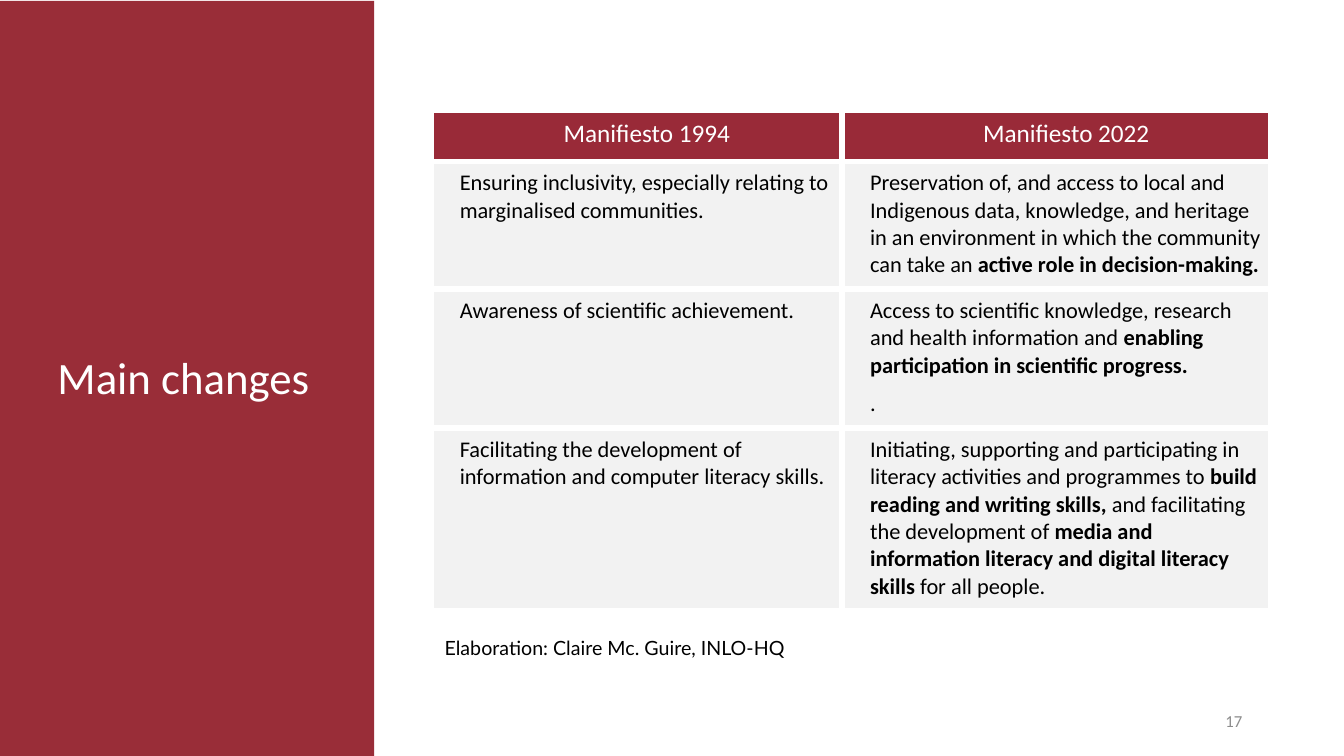
from lxml import etree
from pptx import Presentation
from pptx.dml.color import RGBColor
from pptx.enum.shapes import MSO_SHAPE
from pptx.enum.text import MSO_ANCHOR, PP_ALIGN
from pptx.oxml.ns import qn
from pptx.util import Inches, Pt

TITLE = "Main changes"
CREDIT = "Elaboration: Claire Mc. Guire, INLO-HQ"
PAGE_NUMBER = "17"
HEADERS = ["Manifiesto 1994", "Manifiesto 2022"]
# Each cell is a list of paragraphs; each paragraph is a list of (text, bold) runs.
ROWS = [
    (
        [[("Ensuring inclusivity, especially relating to marginalised communities.", False)]],
        [[("Preservation of, and access to local and Indigenous data, knowledge, and heritage "
           "in an environment in which the community can take an ", False),
          ("active role in decision-making.", True)]],
    ),
    (
        [[("Awareness of scientific achievement.", False)]],
        [[("Access to scientific knowledge, research and health information and ", False),
          ("enabling participation in scientific progress.", True)],
         [(".", False)]],
    ),
    (
        [[("Facilitating the development of\ninformation and computer literacy skills.", False)]],
        [[("Initiating, supporting and participating in literacy activities and programmes to ", False),
          ("build reading and writing skills, ", True),
          ("and facilitating the development of ", False),
          ("media and information literacy and digital literacy skills ", True),
          ("for all people.", False)]],
    ),
]
COLUMN_WIDTHS = [4.07, 4.25]
ROW_HEIGHTS = [0.51, 1.26, 1.37, 1.8]
HEADER_MARGINS = (0.06, 0.09, 0.06, 0.06)
BODY_MARGINS = (0.08, 0.08, 0.08, 0.1)

PANEL_RED = RGBColor(0x99, 0x2D, 0x38)
HEADER_RED = RGBColor(0x99, 0x2A, 0x38)
CELL_GRAY = RGBColor(0xF2, 0xF2, 0xF2)
NUMBER_GRAY = RGBColor(0x8C, 0x8C, 0x8C)
WHITE = RGBColor(0xFF, 0xFF, 0xFF)
BLACK = RGBColor(0, 0, 0)
LEFT, CENTER, RIGHT = PP_ALIGN.LEFT, PP_ALIGN.CENTER, PP_ALIGN.RIGHT


def add_runs(paragraph, runs, size, color, font="Calibri"):
    """Add (text, bold) runs; a newline in the text becomes a line break."""
    for text, bold in runs:
        for index, line in enumerate(text.split("\n")):
            if index:
                paragraph.add_line_break()
            run = paragraph.add_run()
            run.text = line
            run.font.name = font
            run.font.size = Pt(size)
            run.font.bold = bold
            run.font.color.rgb = color


def style_cell(cell, fill, margins):
    """Set the margins, white borders and fill of a cell."""
    left, top, right, bottom = map(Inches, margins)
    cell.margin_left, cell.margin_top = left, top
    cell.margin_right, cell.margin_bottom = right, bottom
    properties = cell._tc.get_or_add_tcPr()
    for side in ("a:lnL", "a:lnR", "a:lnT", "a:lnB"):
        border = etree.SubElement(properties, qn(side), w=str(Pt(4.5)))
        border_fill = etree.SubElement(border, qn("a:solidFill"))
        etree.SubElement(border_fill, qn("a:srgbClr"), val=str(WHITE))
    cell.fill.solid()
    cell.fill.fore_color.rgb = fill


def fill_cell(cell, paragraphs, size, color, alignment, before, after):
    text_frame = cell.text_frame
    for index, runs in enumerate(paragraphs):
        paragraph = text_frame.add_paragraph() if index else text_frame.paragraphs[0]
        paragraph.alignment = alignment
        paragraph.space_before = Pt(before)
        paragraph.space_after = Pt(after)
        properties = paragraph._p.get_or_add_pPr()
        properties.set("marL", str(Inches(0.2)))
        properties.set("indent", "0")
        add_runs(paragraph, runs, size, color)


def add_table(slide):
    frame = slide.shapes.add_table(
        len(ROW_HEIGHTS), len(COLUMN_WIDTHS), Inches(4.28), Inches(1.09),
        Inches(sum(COLUMN_WIDTHS)), Inches(sum(ROW_HEIGHTS)))
    table = frame.table
    table.first_row = False
    table.horz_banding = False
    for column, width in zip(table.columns, COLUMN_WIDTHS):
        column.width = Inches(width)
    for row, height in zip(table.rows, ROW_HEIGHTS):
        row.height = Inches(height)
    for column, header in enumerate(HEADERS):
        cell = table.cell(0, column)
        style_cell(cell, HEADER_RED, HEADER_MARGINS)
        fill_cell(cell, [[(header, False)]], 18, WHITE, CENTER, 12, 0)
    for row, contents in enumerate(ROWS, start=1):
        for column, paragraphs in enumerate(contents):
            cell = table.cell(row, column)
            style_cell(cell, CELL_GRAY, BODY_MARGINS)
            fill_cell(cell, paragraphs, 16, BLACK, LEFT, 0, 8)


def add_panel(slide):
    panel = slide.shapes.add_shape(
        MSO_SHAPE.RECTANGLE, Inches(-0.1), Inches(0.01), Inches(3.81), Inches(7.5))
    panel.shadow.inherit = False
    panel.fill.solid()
    panel.fill.fore_color.rgb = PANEL_RED
    panel.line.fill.background()


def place_title(slide):
    title = slide.shapes.title
    title.left, title.top = Inches(0.08), Inches(3.12)
    title.width, title.height = Inches(3.48), Inches(0.94)
    title.text_frame.word_wrap = True
    title.text_frame.vertical_anchor = MSO_ANCHOR.BOTTOM
    paragraph = title.text_frame.paragraphs[0]
    paragraph.alignment = CENTER
    paragraph.line_spacing = 0.9
    add_runs(paragraph, [(TITLE, False)], 32, WHITE)
    # The title has to lie in front of the panel.
    title.element.getparent().append(title.element)


def add_text_box(slide, box, text, size, color, font, alignment):
    text_box = slide.shapes.add_textbox(*map(Inches, box))
    text_frame = text_box.text_frame
    text_frame.word_wrap = True
    text_frame.vertical_anchor = MSO_ANCHOR.MIDDLE
    paragraph = text_frame.paragraphs[0]
    paragraph.alignment = alignment
    add_runs(paragraph, [(text, False)], size, color, font)
    return text_frame


def main():
    presentation = Presentation()
    presentation.slide_width = Inches(13.33)
    presentation.slide_height = Inches(7.5)
    slide = presentation.slides.add_slide(presentation.slide_layouts[5])
    add_table(slide)
    add_panel(slide)
    add_text_box(slide, (9.42, 6.95, 3, 0.4), PAGE_NUMBER, 12, NUMBER_GRAY, "Calibri", RIGHT)
    place_title(slide)
    credit = add_text_box(slide, (4.41, 6.29, 6.59, 0.24), CREDIT, 14, BLACK, "Lato", LEFT)
    credit.margin_left = credit.margin_top = credit.margin_right = credit.margin_bottom = 0
    credit.paragraphs[0].line_spacing = 1.14
    presentation.save("out.pptx")


if __name__ == "__main__":
    main()
